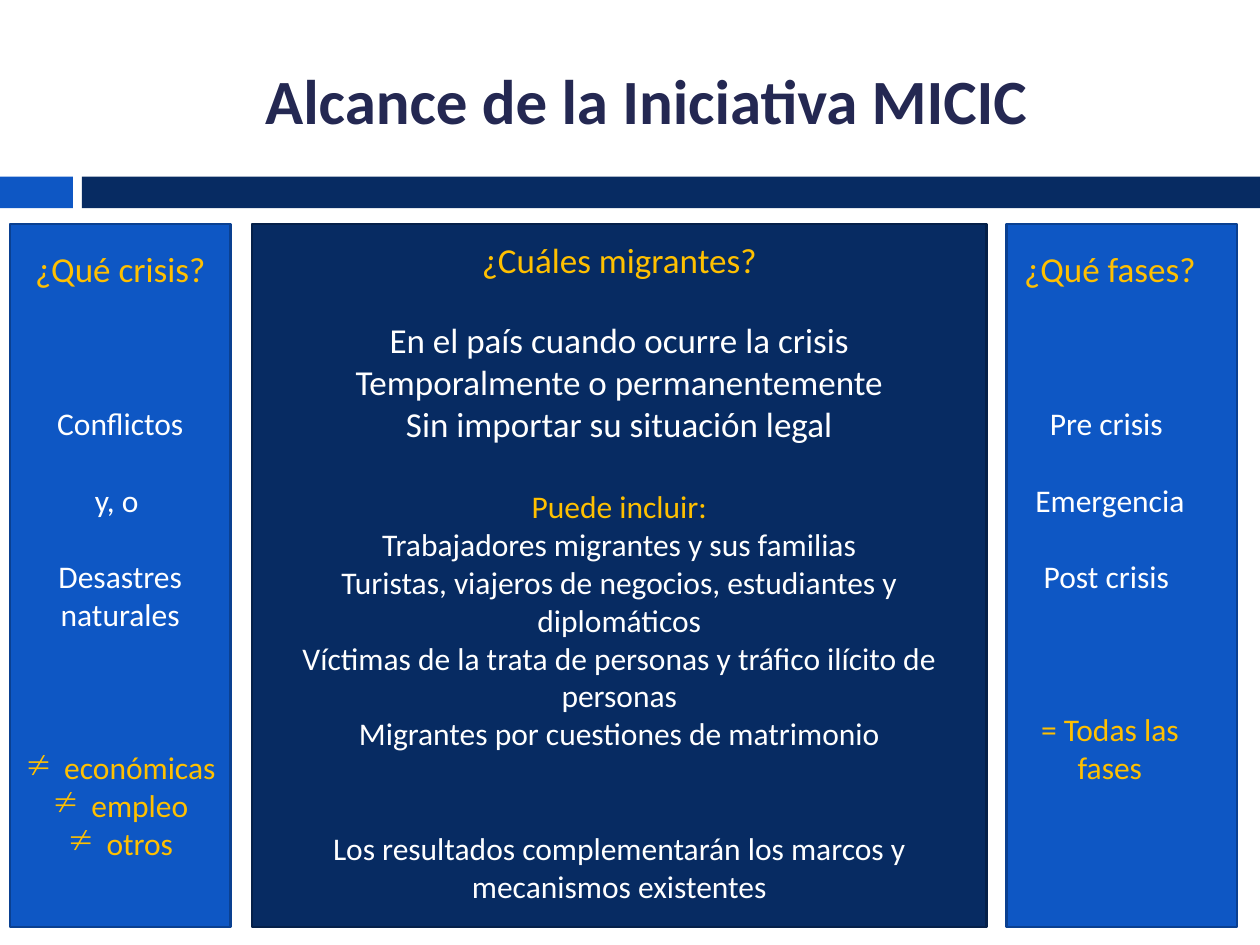
from dataclasses import dataclass

from lxml.etree import SubElement
from pptx import Presentation
from pptx.dml.color import RGBColor as RGB
from pptx.enum.shapes import MSO_SHAPE as Shape
from pptx.enum.text import MSO_ANCHOR as Anchor, PP_ALIGN as Align
from pptx.oxml.ns import qn
from pptx.util import Cm, Pt

COLORS = {
    "blue": "0E57C4",
    "blue_edge": "0A4091",
    "navy": "072B62",
    "navy_edge": "052049",
    "title": "242852",
    "gold": "FFC000",
    "white": "FFFFFF",
}
FONT = "Calibri"
PANEL_TOP, PANEL_HEIGHT = 4.52, 14.17
LINE = 22


@dataclass
class Line:
    text: str
    color: str = "white"
    size: int = 18
    before: float = 0
    bullet: str = ""
    right: float = 0


@dataclass
class Panel:
    left: float
    width: float
    color: str
    inset: float
    lines: list[Line]


PANELS = [
    Panel(0.2, 4.45, "blue", 0.46, [
        Line("¿Qué crisis?", "gold", 20),
        Line("Conflictos", before=3 * LINE),
        Line("y, o ", before=LINE),
        Line("Desastres naturales", before=LINE),
        Line("económicas ", "gold", before=3 * LINE, bullet="≠"),
        Line("empleo", "gold", bullet="≠"),
        Line("otros", "gold", bullet="≠"),
    ]),
    Panel(5.08, 14.81, "navy", 0.28, [
        Line("¿Cuáles migrantes?", "gold", 20),
        Line("En el país cuando ocurre la crisis", size=20, before=LINE),
        Line("Temporalmente o permanentemente", size=20),
        Line("Sin importar su situación legal", size=20),
        Line("Puede incluir:", "gold", before=24.4),
        Line("Trabajadores migrantes y sus familias"),
        Line("Turistas, viajeros de negocios, estudiantes y diplomáticos"),
        Line("Víctimas de la trata de personas y tráfico ilícito de personas"),
        Line("Migrantes por cuestiones de matrimonio"),
        Line("Los resultados complementarán los marcos y mecanismos existentes",
             before=2 * LINE),
    ]),
    Panel(20.29, 4.65, "blue", 0.46, [
        Line("¿Qué fases?", "gold", 20, right=0.48),
        Line("Pre crisis ", before=3 * LINE),
        Line("Emergencia", before=LINE),
        Line("Post crisis ", before=LINE),
        Line("= Todas las fases", "gold", before=3 * LINE),
    ]),
]


def rgb(name: str) -> RGB:
    return RGB.from_string(COLORS[name])


def add_text(p, text: str, *, color: str, size: float, bold: bool = False,
             before: float = 0) -> None:
    p.alignment = Align.CENTER
    p.space_before = Pt(before)
    r = p.add_run()
    r.text = text
    r.font.name = FONT
    r.font.size = Pt(size)
    r.font.bold = bold
    r.font.color.rgb = rgb(color)


def add_bullet(p, char: str, color: str) -> None:
    pPr = p._p.get_or_add_pPr()
    pPr.set("marL", str(Cm(0.79)))
    pPr.set("indent", str(-Cm(0.79)))
    SubElement(SubElement(pPr, qn("a:buClr")), qn("a:srgbClr"), val=COLORS[color])
    SubElement(pPr, qn("a:buSzPct"), val="108000")
    SubElement(pPr, qn("a:buChar"), char=char)


def add_rect(s, left: float, top: float, width: float, height: float,
             color: str, edge: str = ""):
    sp = s.shapes.add_shape(Shape.RECTANGLE, Cm(left), Cm(top), Cm(width), Cm(height))
    sp.shadow.inherit = False
    sp.fill.solid()
    sp.fill.fore_color.rgb = rgb(color)
    if edge:
        sp.line.color.rgb = rgb(edge)
        sp.line.width = Pt(1.5)
    else:
        sp.line.fill.background()
    return sp


def add_panel(s, panel: Panel) -> None:
    sp = add_rect(s, panel.left, PANEL_TOP, panel.width, PANEL_HEIGHT,
                  panel.color, f"{panel.color}_edge")
    tf = sp.text_frame
    tf.word_wrap = True
    tf.vertical_anchor = Anchor.TOP
    tf.margin_top = Cm(panel.inset)
    for i, line in enumerate(panel.lines):
        p = tf.add_paragraph() if i else tf.paragraphs[0]
        add_text(p, line.text, color=line.color, size=line.size, before=line.before)
        if line.bullet:
            add_bullet(p, line.bullet, line.color)
        if line.right:
            p._p.get_or_add_pPr().set("marR", str(Cm(line.right)))


def main() -> None:
    prs = Presentation()
    prs.slide_width, prs.slide_height = Cm(25.4), Cm(19.05)
    s = prs.slides.add_slide(prs.slide_layouts[5])

    title = s.shapes.title
    title.left, title.top, title.width, title.height = Cm(1.7), Cm(0.64), Cm(22.66), Cm(2.74)
    title.text_frame.vertical_anchor = Anchor.MIDDLE
    add_text(title.text_frame.paragraphs[0], "Alcance de la Iniciativa MICIC",
             color="title", size=36, bold=True)

    add_rect(s, 0, 3.56, 1.47, 0.64, "blue")
    add_rect(s, 1.65, 3.56, 23.75, 0.64, "navy")
    for panel in PANELS:
        add_panel(s, panel)
    prs.save("out.pptx")


if __name__ == "__main__":
    main()
